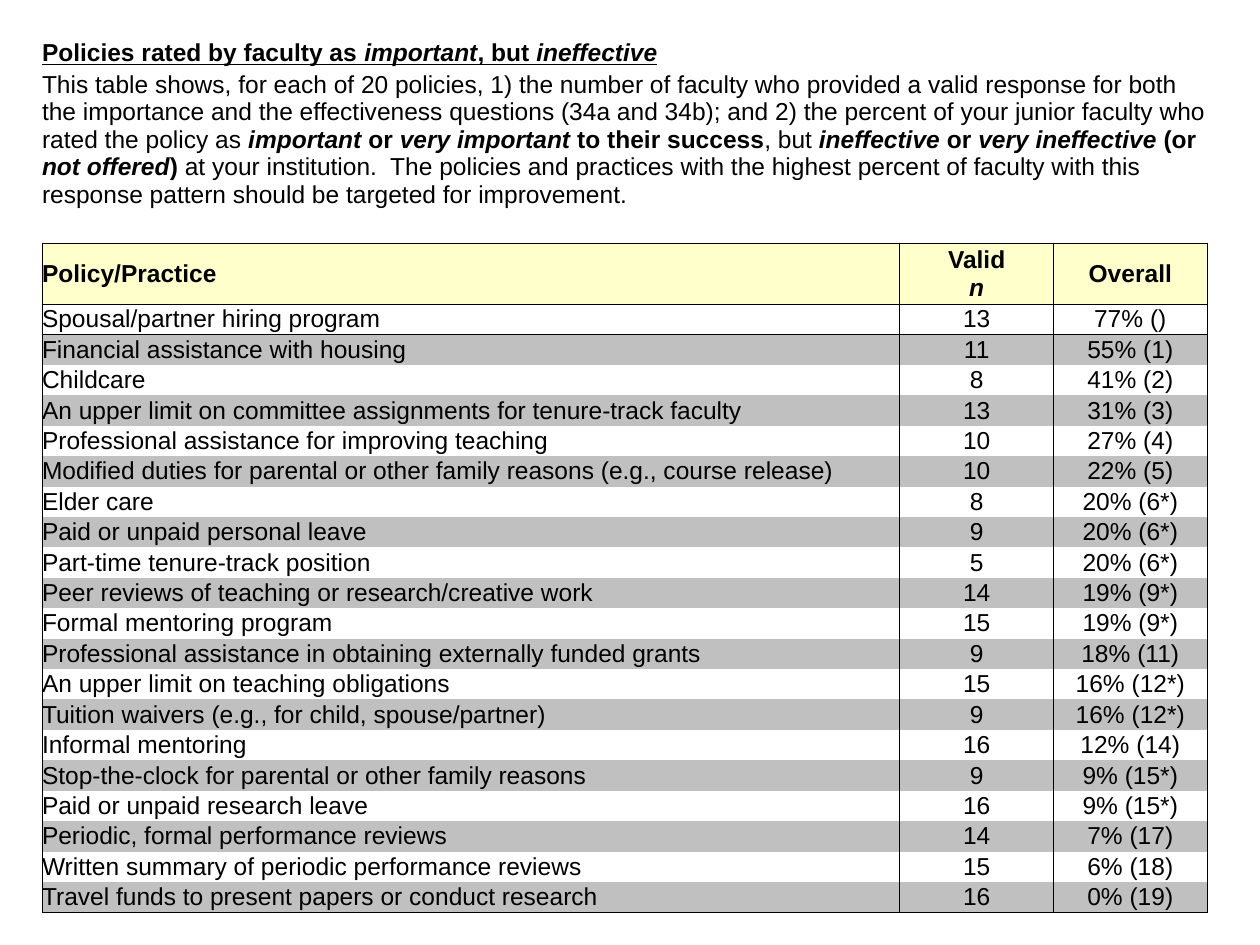
from lxml.etree import SubElement
from pptx import Presentation
from pptx.dml.color import RGBColor
from pptx.enum.text import MSO_ANCHOR as ANCHOR, PP_ALIGN as ALIGN
from pptx.oxml import parse_xml
from pptx.oxml.ns import nsdecls, qn
from pptx.util import Pt

BLACK = RGBColor(0x00, 0x00, 0x00)
CREAM = RGBColor(0xFF, 0xFF, 0xCC)
GREY = RGBColor(0xC0, 0xC0, 0xC0)
FONT, SIZE = "Arial", 14
NO_GRID = "{2D5ABB26-0587-4C30-8999-92F81FD0307C}"

TITLE = [
    ("Policies rated by faculty as ", "bu"), ("important", "biu"),
    (", but ", "bu"), ("ineffective", "biu"),
]
INTRO = [
    ("This table shows, for each of 20 policies, 1) the number of faculty who provided a valid "
     "response for both the importance and the effectiveness questions (34a and 34b); and 2) the "
     "percent of your junior faculty who rated the policy as ", ""),
    ("important", "bi"), (" or ", "b"), ("very important", "bi"), (" to their success", "b"),
    (", but ", ""), ("ineffective", "bi"), (" or ", "b"), ("very ineffective", "bi"),
    (" (or ", "b"), ("not offered", "bi"), (")", "b"),
    (" at your institution.  The policies and practices with the highest percent of faculty with "
     "this response pattern should be targeted for improvement.", ""),
]
HEADER = [
    [("Policy/Practice", "b")],
    [("Valid", "b"), ("\n", "b"), ("n", "bi")],
    [("Overall", "b")],
]
POLICIES = [
    ("Spousal/partner hiring program", "13", "77% ()"),
    ("Financial assistance with housing", "11", "55% (1)"),
    ("Childcare", "8", "41% (2)"),
    ("An upper limit on committee assignments for tenure-track faculty", "13", "31% (3)"),
    ("Professional assistance for improving teaching", "10", "27% (4)"),
    ("Modified duties for parental or other family reasons (e.g., course release)", "10", "22% (5)"),
    ("Elder care", "8", "20% (6*)"),
    ("Paid or unpaid personal leave", "9", "20% (6*)"),
    ("Part-time tenure-track position", "5", "20% (6*)"),
    ("Peer reviews of teaching or research/creative work", "14", "19% (9*)"),
    ("Formal mentoring program", "15", "19% (9*)"),
    ("Professional assistance in obtaining externally funded grants", "9", "18% (11)"),
    ("An upper limit on teaching obligations", "15", "16% (12*)"),
    ("Tuition waivers (e.g., for child, spouse/partner)", "9", "16% (12*)"),
    ("Informal mentoring", "16", "12% (14)"),
    ("Stop-the-clock for parental or other family reasons", "9", "9% (15*)"),
    ("Paid or unpaid research leave", "16", "9% (15*)"),
    ("Periodic, formal performance reviews", "14", "7% (17)"),
    ("Written summary of periodic performance reviews", "15", "6% (18)"),
    ("Travel funds to present papers or conduct research", "16", "0% (19)"),
]

LEFT, TOP = 24, 18
COLS = [490.2, 87.8, 87.8]
LINE = 17.4
ROWS = [20.2, 83.5, LINE, 2 * LINE] + [LINE] * len(POLICIES)
HEADER_ROW = 3


def write(cell, runs, align=ALIGN.LEFT, anchor=ANCHOR.MIDDLE):
    cell.margin_left = cell.margin_right = cell.margin_top = cell.margin_bottom = 0
    cell.vertical_anchor = anchor
    p = cell.text_frame.paragraphs[0]
    p.alignment = align
    for text, style in runs:
        if text == "\n":
            p.add_line_break()
            SubElement(p._p[-1], qn("a:rPr"), sz=str(SIZE * 100))
            continue
        r = p.add_run()
        r.text = text
        f = r.font
        f.name, f.size, f.color.rgb = FONT, Pt(SIZE), BLACK
        f.bold, f.italic, f.underline = "b" in style, "i" in style, "u" in style
    if not runs:
        SubElement(p._p, qn("a:endParaRPr"), sz=str(SIZE * 100))


def paint(cell, color=None, sides=""):
    if color is None:
        cell.fill.background()
    else:
        cell.fill.solid()
        cell.fill.fore_color.rgb = color
    tc_pr = cell._tc.get_or_add_tcPr()
    for i, side in enumerate(sides):
        tc_pr.insert(i, parse_xml(
            f'<a:ln{side} {nsdecls("a")} w="{Pt(0.5)}"><a:solidFill>'
            f'<a:srgbClr val="{BLACK}"/></a:solidFill></a:ln{side}>'))


def main():
    prs = Presentation()
    prs.slide_width, prs.slide_height = Pt(720), Pt(540)
    s = prs.slides.add_slide(prs.slide_layouts[6])
    table = s.shapes.add_table(len(ROWS), len(COLS), Pt(LEFT), Pt(TOP),
                               Pt(sum(COLS)), Pt(sum(ROWS))).table
    table.first_row = table.horz_banding = False
    table._tbl.tblPr.find(qn("a:tableStyleId")).text = NO_GRID
    for col, width in zip(table.columns, COLS):
        col.width = Pt(width)
    for row, height in zip(table.rows, ROWS):
        row.height = Pt(height)

    for i, (runs, anchor) in enumerate([(TITLE, ANCHOR.BOTTOM), (INTRO, ANCHOR.MIDDLE)]):
        table.cell(i, 0).merge(table.cell(i, len(COLS) - 1))
        write(table.cell(i, 0), runs, anchor=anchor)
        paint(table.cell(i, 0))

    for j in range(len(COLS)):
        align = ALIGN.CENTER if j else ALIGN.LEFT
        spacer, head = table.cell(HEADER_ROW - 1, j), table.cell(HEADER_ROW, j)
        write(spacer, [])
        paint(spacer, sides="B")
        write(head, HEADER[j], align)
        paint(head, CREAM, "LRTB")
        for i, policy in enumerate(POLICIES):
            cell = table.cell(HEADER_ROW + 1 + i, j)
            edge = "T" if i == 0 else "B" if i == len(POLICIES) - 1 else ""
            write(cell, [(policy[j], "")], align)
            paint(cell, GREY if i % 2 else None, "LR" + edge)

    prs.save("out.pptx")


if __name__ == "__main__":
    """Build the slide of faculty policies rated important but ineffective."""
    main()
